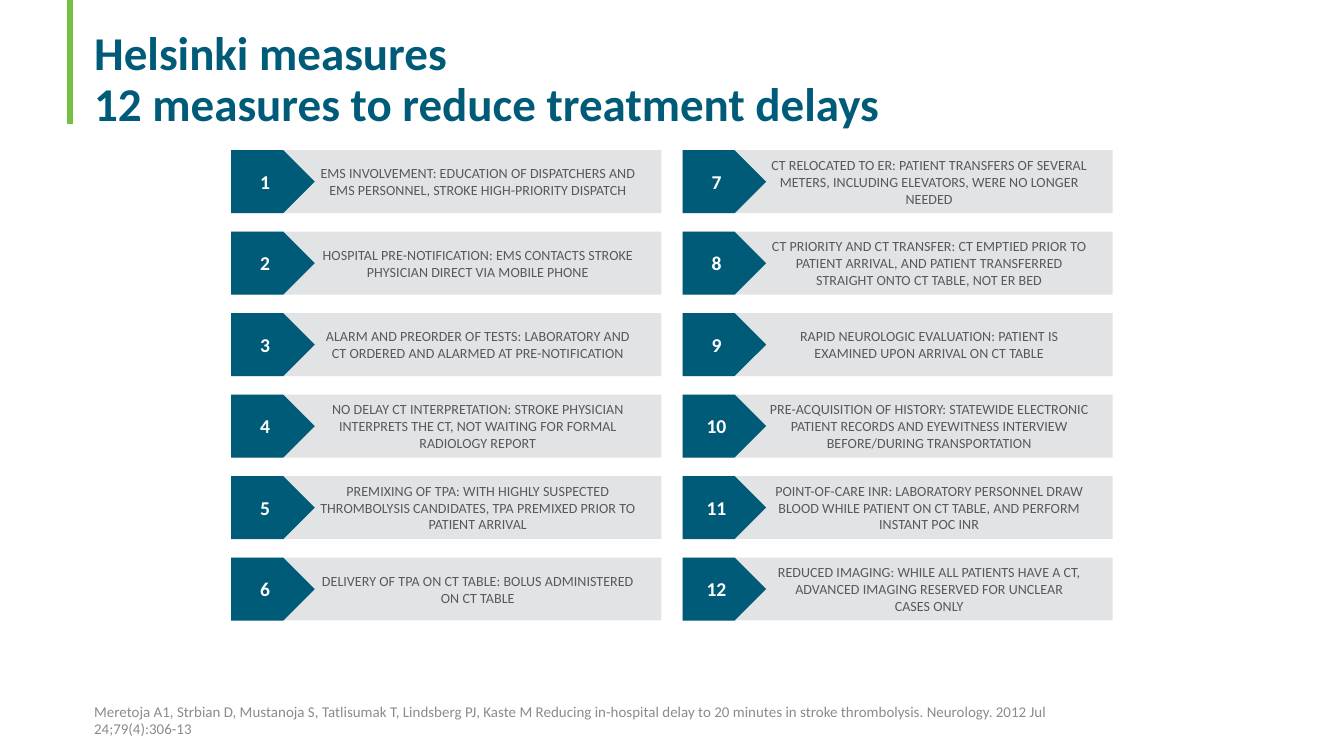
from dataclasses import dataclass

from lxml.etree import SubElement
from pptx import Presentation
from pptx.dml.color import RGBColor
from pptx.enum.shapes import MSO_CONNECTOR as Connector, MSO_SHAPE as Shape
from pptx.enum.text import MSO_ANCHOR as Anchor, MSO_AUTO_SIZE as AutoSize, PP_ALIGN as Align
from pptx.oxml.ns import qn
from pptx.util import Cm, Pt


@dataclass(frozen=True)
class Theme:
    font: str = "Calibri"
    teal: RGBColor = RGBColor(0x00, 0x5B, 0x79)
    green: RGBColor = RGBColor(0x75, 0xC0, 0x43)
    card: RGBColor = RGBColor(0xE2, 0xE3, 0xE4)
    body: RGBColor = RGBColor(0x58, 0x59, 0x5B)
    muted: RGBColor = RGBColor(0x89, 0x8B, 0x8E)
    white: RGBColor = RGBColor(0xFF, 0xFF, 0xFF)
    title_size: float = 25.2
    number_size: float = 10.5
    citation_size: float = 8
    measure_size: float = 7.5


THEME = Theme()

TITLE = "Helsinki measures\n12 measures to reduce treatment delays"
CITATION = (
    "Meretoja A1, Strbian D, Mustanoja S, Tatlisumak T, Lindsberg PJ, Kaste M "
    "Reducing in-hospital delay to 20 minutes in stroke thrombolysis. "
    "Neurology. 2012 Jul 24;79(4):306-13"
)
MEASURES = [
    "EMS INVOLVEMENT: EDUCATION OF DISPATCHERS AND EMS PERSONNEL, STROKE HIGH-PRIORITY DISPATCH",
    "HOSPITAL PRE-NOTIFICATION: EMS CONTACTS STROKE PHYSICIAN DIRECT VIA MOBILE PHONE",
    "ALARM AND PREORDER OF TESTS: LABORATORY AND CT ORDERED AND ALARMED AT PRE-NOTIFICATION",
    "NO DELAY CT INTERPRETATION: STROKE PHYSICIAN INTERPRETS THE CT, NOT WAITING FOR FORMAL "
    "RADIOLOGY REPORT",
    "PREMIXING OF TPA: WITH HIGHLY SUSPECTED THROMBOLYSIS CANDIDATES, TPA PREMIXED PRIOR TO "
    "PATIENT ARRIVAL",
    "DELIVERY OF TPA ON CT TABLE: BOLUS ADMINISTERED ON CT TABLE",
    "CT RELOCATED TO ER: PATIENT TRANSFERS OF SEVERAL METERS, INCLUDING ELEVATORS, WERE NO "
    "LONGER NEEDED",
    "CT PRIORITY AND CT TRANSFER: CT EMPTIED PRIOR TO PATIENT ARRIVAL, AND PATIENT TRANSFERRED "
    "STRAIGHT ONTO CT TABLE, NOT ER BED",
    "RAPID NEUROLOGIC EVALUATION: PATIENT IS EXAMINED UPON ARRIVAL ON CT TABLE",
    "PRE-ACQUISITION OF HISTORY: STATEWIDE ELECTRONIC PATIENT RECORDS AND EYEWITNESS INTERVIEW "
    "BEFORE/DURING TRANSPORTATION",
    "POINT-OF-CARE INR: LABORATORY PERSONNEL DRAW BLOOD WHILE PATIENT ON CT TABLE, AND PERFORM "
    "INSTANT POC INR",
    "REDUCED IMAGING: WHILE ALL PATIENTS HAVE A CT, ADVANCED IMAGING RESERVED FOR UNCLEAR\n"
    "CASES ONLY",
]

# Grid of measures, in centimetres, filled column by column
ROWS = 6
GRID_LEFT, GRID_TOP = 4.37, 2.84
COLUMN_STEP, ROW_STEP = 8.53, 1.54
CARD_WIDTH, CARD_HEIGHT, TAG_WIDTH = 8.13, 1.19, 1.58


def write(frame, text, size, color, bold=False, align=Align.LEFT, anchor=Anchor.MIDDLE,
          insets=(0.18, 0.1, 0.18, 0.1), wrap=True):
    """Fill a text frame with one formatted paragraph; insets are left, top, right, bottom."""
    frame.auto_size = AutoSize.NONE
    frame.word_wrap = wrap
    frame.vertical_anchor = anchor
    frame.margin_left, frame.margin_top, frame.margin_right, frame.margin_bottom = map(Cm, insets)
    paragraph = frame.paragraphs[0]
    paragraph.text = text
    paragraph.alignment = align
    for run in paragraph.runs:
        run.font.name = THEME.font
        run.font.size = Pt(size)
        run.font.bold = bold
        run.font.color.rgb = color
    return paragraph


def add_block(slide, kind, left, top, width, fill):
    block = slide.shapes.add_shape(kind, Cm(left), Cm(top), Cm(width), Cm(CARD_HEIGHT))
    block.shadow.inherit = False
    block.fill.solid()
    block.fill.fore_color.rgb = fill
    block.line.fill.background()
    return block


def add_measure(slide, number, measure):
    column, row = divmod(number - 1, ROWS)
    left, top = GRID_LEFT + column * COLUMN_STEP, GRID_TOP + row * ROW_STEP
    card = add_block(slide, Shape.RECTANGLE, left, top, CARD_WIDTH, THEME.card)
    write(card.text_frame, measure, THEME.measure_size, THEME.body,
          align=Align.CENTER, insets=(1.65, 0, 0.46, 0))
    tag = add_block(slide, Shape.PENTAGON, left, top, TAG_WIDTH, THEME.teal)
    write(tag.text_frame, str(number), THEME.number_size, THEME.white, bold=True,
          align=Align.CENTER, insets=(0.25, 0, 0.25, 0), wrap=False)


def add_accent(slide):
    accent = slide.shapes.add_connector(Connector.STRAIGHT, Cm(1.32), Cm(0), Cm(1.32), Cm(2.34))
    accent.line.color.rgb = THEME.green
    accent.line.width = Pt(3)
    SubElement(accent.element.spPr, qn("a:effectLst"))


def add_title(slide):
    title = slide.shapes.title
    title.left, title.top, title.width, title.height = Cm(1.6), Cm(0.79), Cm(22.28), Cm(1.8)
    heading = write(title.text_frame, TITLE, THEME.title_size, THEME.teal,
                    bold=True, anchor=Anchor.BOTTOM)
    heading.line_spacing = 0.9


def add_citation(slide):
    citation = slide.shapes.add_textbox(Cm(1.6), Cm(13.23), Cm(19.3), Cm(0.76))
    write(citation.text_frame, CITATION, THEME.citation_size, THEME.muted)


def main():
    deck = Presentation()
    deck.slide_width, deck.slide_height = Cm(25.4), Cm(14.29)
    slide = deck.slides.add_slide(deck.slide_layouts[5])

    # Heading
    add_accent(slide)
    add_title(slide)

    # Source reference
    add_citation(slide)

    # Numbered measures
    for number, measure in enumerate(MEASURES, start=1):
        add_measure(slide, number, measure)

    deck.save("out.pptx")


if __name__ == "__main__":
    main()
